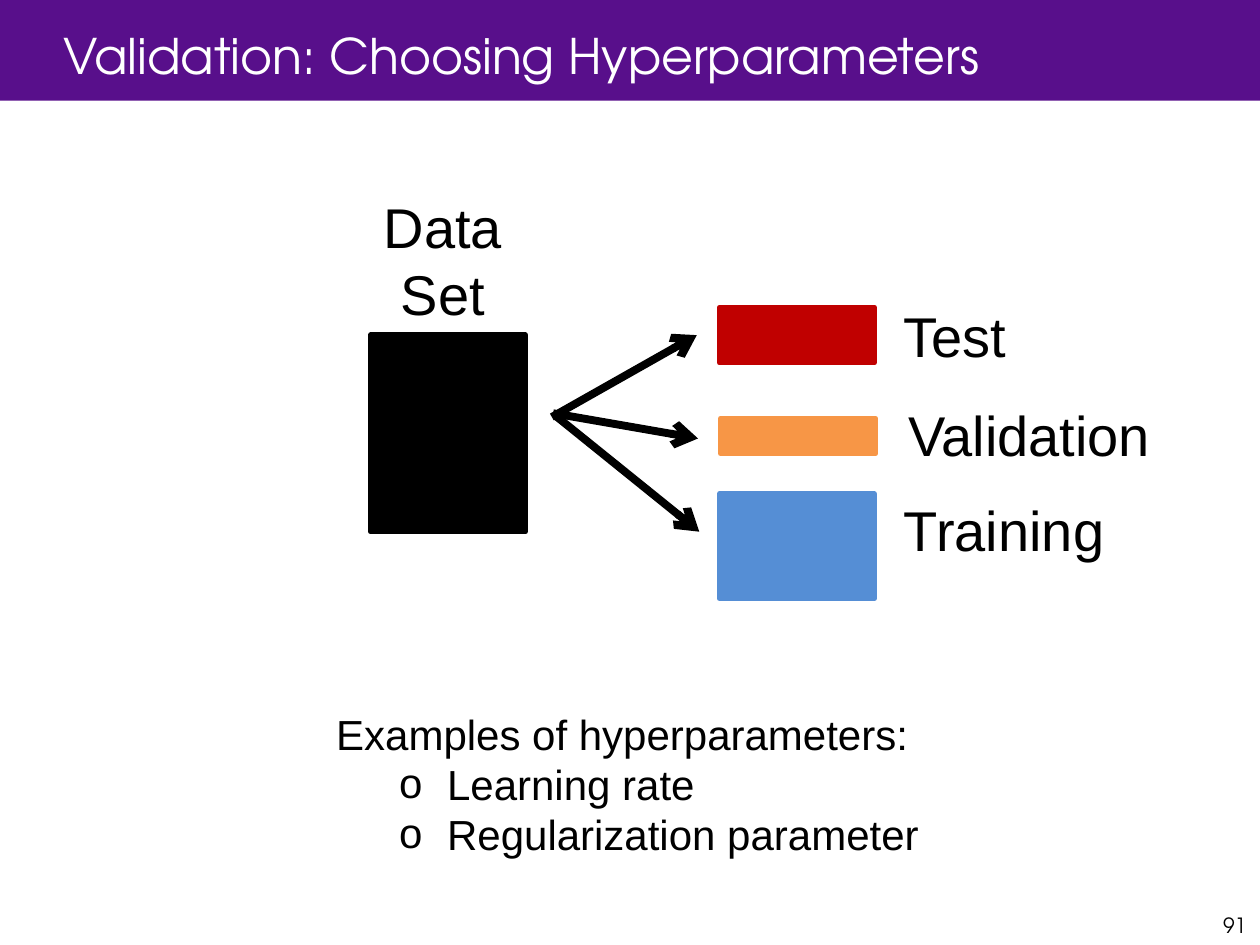
from lxml import etree
from pptx import Presentation
from pptx import util as u
from pptx.dml.color import RGBColor
from pptx.enum import shapes, text
from pptx.oxml.ns import qn

theme = {
    "header": "580F8B", "white": "FFFFFF", "black": "000000",
    "test": "C00000", "validation": "F79646", "training": "558ED5",
    "head_font": "TeX Gyre Adventor", "body_font": "Arial",
    "title": 28, "label": 32, "body": 24, "number": 12,
}


def add_block(s, box, color, line=None):
    sp = s.shapes.add_shape(shapes.MSO_SHAPE.RECTANGLE, *map(u.Inches, box))
    sp.shadow.inherit = False
    sp.fill.solid()
    sp.fill.fore_color.rgb = RGBColor.from_string(theme[color])
    if line:
        sp.line.color.rgb = RGBColor.from_string(theme[color])
        sp.line.width = u.Pt(line)
    else:
        sp.line.fill.background()
    return sp


def write(sp, box, lines, size, font="body_font", color="black", align="LEFT", wrap=False):
    sp.left, sp.top, sp.width, sp.height = map(u.Inches, box)
    tf = sp.text_frame
    frame = {"word_wrap": wrap, "auto_size": text.MSO_AUTO_SIZE.NONE,
             "vertical_anchor": text.MSO_ANCHOR.TOP}
    for name, value in frame.items():
        setattr(tf, name, value)
    for i, line in enumerate(lines):
        p = tf.paragraphs[0] if i == 0 else tf.add_paragraph()
        p.alignment = text.PP_ALIGN[align]
        r = p.add_run()
        r.text = line
        style = {"name": theme[font], "size": u.Pt(theme[size])}
        for name, value in style.items():
            setattr(r.font, name, value)
        r.font.color.rgb = RGBColor.from_string(theme[color])
    return tf


prs = Presentation()
prs.slide_width, prs.slide_height = u.Inches(10), u.Inches(7.5)
s = prs.slides.add_slide(prs.slide_layouts[5])

header = add_block(s, (0, 0, 10, 0.8), "header")
title = s.shapes.title
title.element.addprevious(header.element)
write(title, (0.4, 0.15, 7.61, 0.57), ["Validation: Choosing Hyperparameters"],
      "title", "head_font", "white")

add_block(s, (2.94, 2.66, 1.23, 1.56), "black", 3)
parts = [
    ("test", (5.71, 2.44, 1.23, 0.44)),
    ("validation", (5.72, 3.32, 1.23, 0.28)),
    ("training", (5.71, 3.92, 1.23, 0.83)),
]
for color, box in parts:
    add_block(s, box, color, 3)

labels = [
    (["Data", "Set"], (2.94, 1.48, 1.15, 1.18)),
    (["Test"], (7.07, 2.34, 1.02, 0.64)),
    (["Validation"], (7.1, 3.13, 2.14, 0.64)),
    (["Training"], (7.07, 3.88, 1.8, 0.64)),
]
for lines, box in labels:
    write(s.shapes.add_textbox(0, 0, 0, 0), box, lines, "label", align="CENTER")

arrows = [(4.38, 3.31, 5.53, 2.66), (4.39, 3.28, 5.54, 3.48), (4.41, 3.3, 5.55, 4.22)]
for ends in arrows:
    arrow = s.shapes.add_connector(shapes.MSO_CONNECTOR.STRAIGHT, *map(u.Inches, ends))
    arrow.line.color.rgb = RGBColor.from_string(theme["black"])
    arrow.line.width = u.Pt(4.5)
    etree.SubElement(arrow.line._get_or_add_ln(), qn("a:tailEnd"), type="arrow")
    etree.SubElement(arrow.element.spPr, qn("a:effectLst"))

tf = write(s.shapes.add_textbox(0, 0, 0, 0), (2.57, 5.57, 5.75, 1.31),
           ["Examples of hyperparameters:", "Learning rate", "Regularization parameter"],
           "body", wrap=True)
for p in tf.paragraphs[1:]:
    p.level = 1
    pPr = p._p.get_or_add_pPr()
    pPr.set("marL", str(u.Inches(0.88)))
    pPr.set("indent", str(u.Inches(-0.38)))
    etree.SubElement(pPr, qn("a:buFont"), typeface=theme["body_font"])
    etree.SubElement(pPr, qn("a:buChar"), char="o")

write(s.shapes.add_textbox(0, 0, 0, 0), (9.29, 7.19, 0.7, 0.3), ["91"],
      "number", "head_font", align="RIGHT", wrap=True)

prs.save("out.pptx")
